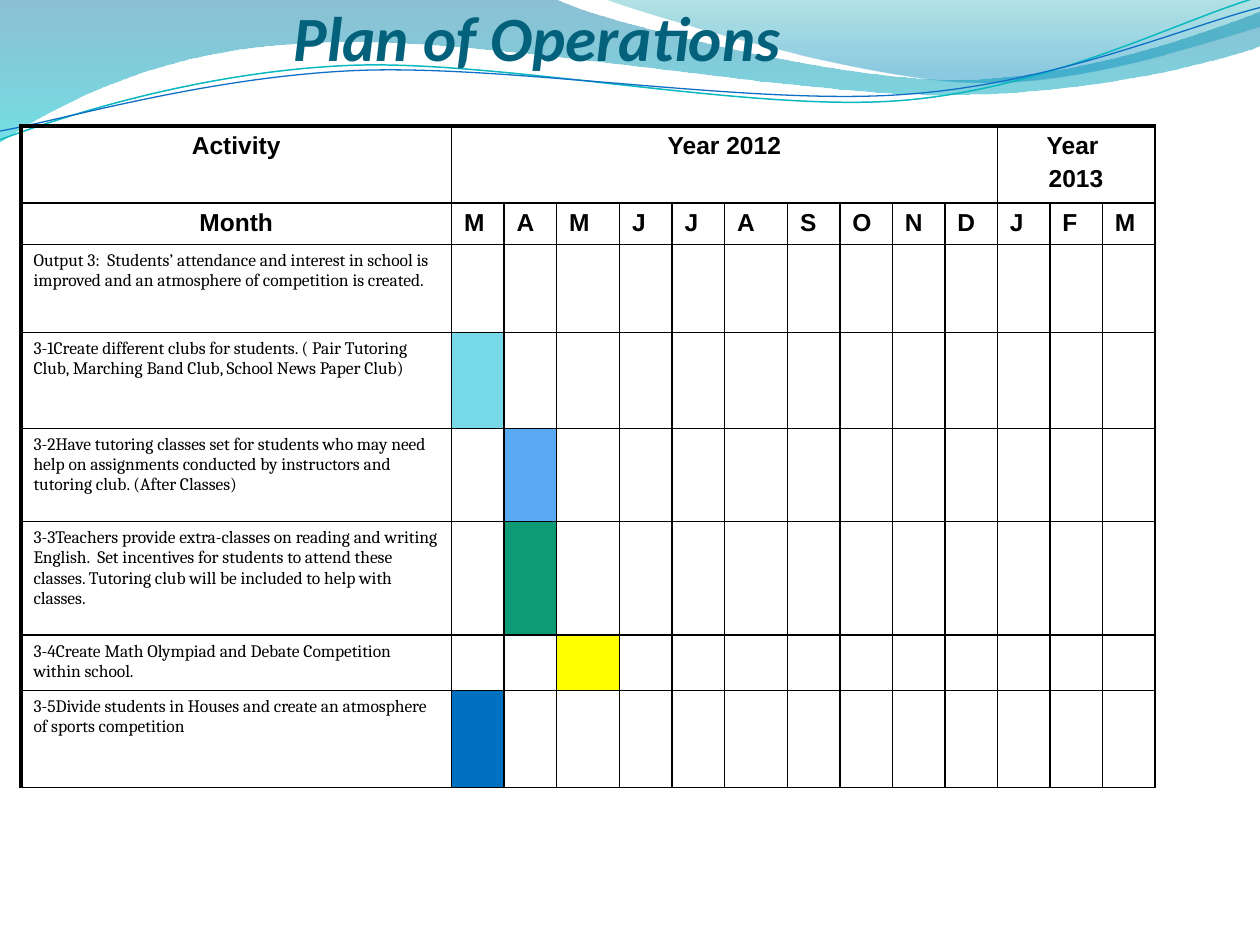
"""Build a slide with a plan of operations as a month-by-month table."""
import dataclasses
import typing

import lxml.etree
import pptx
import pptx.dml.color
import pptx.enum.text
import pptx.oxml.ns
import pptx.util

Inches = pptx.util.Inches
Pt = pptx.util.Pt
ALIGN = pptx.enum.text.PP_ALIGN
qn = pptx.oxml.ns.qn

COLORS = {
    "title": "04617B", "ink": "000000", "aqua": "77D9E8", "sky": "59AAF2",
    "green": "0C9B74", "yellow": "FFFF00", "blue": "0070C0",
    "deep": "0074A1", "cyan": "00C6CF", "teal": "00A1A9", "azure": "008BBF",
    "thread": "0AB8BF", "cord": "0F6FC6",
}


class Stop(typing.NamedTuple):
    """One gradient stop: place and opacity run from 0 to 1."""
    place: float
    color: str
    alpha: float


@dataclasses.dataclass
class Wave:
    """A curved outline: pairs are straight steps, sixes are Bezier steps."""
    start: tuple
    steps: list
    stops: tuple = ()
    line: str = ""
    width: float = 0


@dataclasses.dataclass
class Task:
    """A table row: its text, height and the marked month, if any."""
    text: str
    height: float
    month: int = 0
    color: str = ""


WAVES = [
    Wave((0, 0), [
        (4.4, -0.01), (4.76, 0.17, 6.64, 0.63, 7.58, 0.63),
        (8.53, 0.63, 9.58, 0.26, 10, 0.09), (10.01, 0.36),
        (9.83, 0.44, 8.7, 0.76, 7.46, 0.75),
        (6.22, 0.75, 3.82, 0.28, 2.57, 0.34),
        (1.29, 0.36, 0.46, 0.83, -0.01, 1.13), (0, 0)],
        stops=(Stop(0, "deep", 0.45), Stop(1, "cyan", 0.55))),
    Wave((4.79, -0.01), [
        (5.09, 0.11, 6.82, 0.62, 7.69, 0.65),
        (8.56, 0.69, 9.61, 0.32, 10, 0.21), (10, 0), (4.79, -0.01)],
        stops=(Stop(0, "teal", 0.3), Stop(0.8, "azure", 0.45))),
    Wave((0, 1.11), [
        (0.48, 0.93, 1.58, 0.57, 2.77, 0.52),
        (3.95, 0.47, 5.93, 0.89, 7.13, 0.8),
        (8.33, 0.71, 9.38, 0.15, 9.98, -0.02)],
        line="thread", width=0.85),
    Wave((0, 1.04), [
        (0.47, 0.96, 1.64, 0.61, 2.83, 0.56),
        (4.03, 0.51, 5.97, 0.84, 7.17, 0.75),
        (8.36, 0.67, 9.41, 0.21, 10, 0.06)],
        line="cord", width=0.75),
]

TASKS = [
    Task("Output 3:  Students’ attendance and interest in school is improved "
         "and an atmosphere of competition is created.", 0.7),
    Task("3-1Create different clubs for students. ( Pair Tutoring Club, "
         "Marching Band Club, School News Paper Club)", 0.76, 1, "aqua"),
    Task("3-2Have tutoring classes set for students who may need help on "
         "assignments conducted by instructors and tutoring club. "
         "(After Classes)", 0.74, 2, "sky"),
    Task("3-3Teachers provide extra-classes on reading and writing English.  "
         "Set incentives for students to attend these classes. Tutoring club "
         "will be included to help with classes.", 0.9, 2, "green"),
    Task("3-4Create Math Olympiad and Debate Competition within school.",
         0.44, 3, "yellow"),
    Task("3-5Divide students in Houses and create an atmosphere of sports "
         "competition", 0.77, 1, "blue"),
]
MONTHS = "MAMJJASONDJFM"
WIDE = (3, 6)
HEADS = (0.61, 0.33)


def tint(name: str) -> pptx.dml.color.RGBColor:
    """Look up a named colour."""
    return pptx.dml.color.RGBColor.from_string(COLORS[name])


def bend(shape, wave: Wave) -> None:
    """Join each three straight segments of a Bezier step into one curve."""
    parts = iter(list(shape.element.iter(qn("a:lnTo"))))
    for step in wave.steps:
        first = next(parts)
        if len(step) == 6:
            first.tag = qn("a:cubicBezTo")
            for _ in range(2):
                rest = next(parts)
                first.append(rest[0])
                rest.getparent().remove(rest)


def draw_wave(slide, wave: Wave) -> None:
    """Draw one wave as a faded area or a thin line."""
    spots = [wave.start] + [step[k:k + 2] for step in wave.steps
                            for k in range(0, len(step), 2)]
    spots = [(Inches(x), Inches(y)) for x, y in spots]
    pen = slide.shapes.build_freeform(*spots[0], scale=1.0)
    pen.add_line_segments(spots[1:], close=bool(wave.stops))
    shape = pen.convert_to_shape()
    bend(shape, wave)
    shape.shadow.inherit = False
    if wave.line:
        shape.fill.background()
        shape.line.color.rgb = tint(wave.line)
        shape.line.width = Pt(wave.width)
        return
    shape.line.fill.background()
    shape.fill.gradient()
    shape.fill.gradient_angle = 270
    for mark, stop in zip(shape.fill.gradient_stops, wave.stops):
        mark.color.rgb = tint(stop.color)
        mark.position = stop.place
    for node, stop in zip(shape.element.iter(qn("a:srgbClr")), wave.stops):
        lxml.etree.SubElement(node, qn("a:alpha"),
                              val=str(round(stop.alpha * 100000)))


def edge(cell, row: int, col: int) -> None:
    """Draw the borders of a cell, thick on the table's left and top."""
    props = cell._tc.get_or_add_tcPr()
    sides = {"L": 1 if col else 2.25, "R": 1, "T": 1 if row else 2.25, "B": 1}
    for place, (side, width) in enumerate(sides.items()):
        line = lxml.etree.Element(qn("a:ln" + side), w=str(Pt(width)))
        fill = lxml.etree.SubElement(line, qn("a:solidFill"))
        lxml.etree.SubElement(fill, qn("a:srgbClr"), val=COLORS["ink"])
        props.insert(place, line)


def write(cell, text: str, size: int, face: str, bold: bool = False,
          align=ALIGN.LEFT) -> None:
    """Fill a cell with formatted text."""
    cell.text = text
    for place, para in enumerate(cell.text_frame.paragraphs):
        para.alignment = align
        para.font.size, para.font.name = Pt(size), face
        para.font.bold = bold
        para.font.color.rgb = tint("ink")
        if place:
            para.space_before = Pt(0.2 * size)


def draw_plan(slide) -> None:
    """Draw the table of tasks and months."""
    widths = [41 / 12] + [0.5 if k in WIDE else 5 / 12
                          for k in range(1, len(MONTHS) + 1)]
    heights = [*HEADS, *(task.height for task in TASKS)]
    table = slide.shapes.add_table(
        len(heights), len(widths), Inches(1 / 6), Inches(1),
        Inches(sum(widths)), Inches(sum(heights))).table
    table.first_row = table.horz_banding = False
    for col, width in zip(table.columns, widths):
        col.width = Inches(width)
    for r, height in enumerate(heights):
        table.rows[r].height = Inches(height)
        for c in range(len(widths)):
            cell = table.cell(r, c)
            cell.fill.background()
            edge(cell, r, c)
    table.cell(0, 1).merge(table.cell(0, 10))
    table.cell(0, 11).merge(table.cell(0, 13))
    for r, c, text in ((0, 0, "Activity"), (0, 1, "Year 2012"),
                       (0, 11, "Year \n2013"), (1, 0, "Month")):
        write(table.cell(r, c), text, 14, "Arial", True, ALIGN.CENTER)
    for c, month in enumerate(MONTHS, 1):
        write(table.cell(1, c), month, 14, "Arial", True)
    for r, task in enumerate(TASKS, len(HEADS)):
        write(table.cell(r, 0), task.text, 10, "Cambria")
        if task.month:
            cell = table.cell(r, task.month)
            cell.fill.solid()
            cell.fill.fore_color.rgb = tint(task.color)


def draw_title(slide) -> None:
    """Place the title in front of the waves."""
    title = slide.shapes.title
    title.element.getparent().append(title.element)
    title.left, title.top = Inches(2.33), Inches(0.17)
    title.width, title.height = Inches(5.83), Inches(0.42)
    frame = title.text_frame
    frame.text = "Plan of Operations"
    frame.auto_size = pptx.enum.text.MSO_AUTO_SIZE.NONE
    frame.vertical_anchor = pptx.enum.text.MSO_ANCHOR.BOTTOM
    frame.margin_left = frame.margin_right = frame.margin_bottom = 0
    para = frame.paragraphs[0]
    para.alignment = ALIGN.LEFT
    para.font.size, para.font.name = Pt(36), "Calibri"
    para.font.bold = para.font.italic = True
    para.font.color.rgb = tint("title")


def main() -> None:
    """Build and save the deck."""
    deck = pptx.Presentation()
    deck.slide_width, deck.slide_height = Inches(10), Inches(7.5)
    slide = deck.slides.add_slide(deck.slide_layouts[5])
    for wave in WAVES:
        draw_wave(slide, wave)
    draw_title(slide)
    draw_plan(slide)
    deck.save("out.pptx")


if __name__ == "__main__":
    main()
